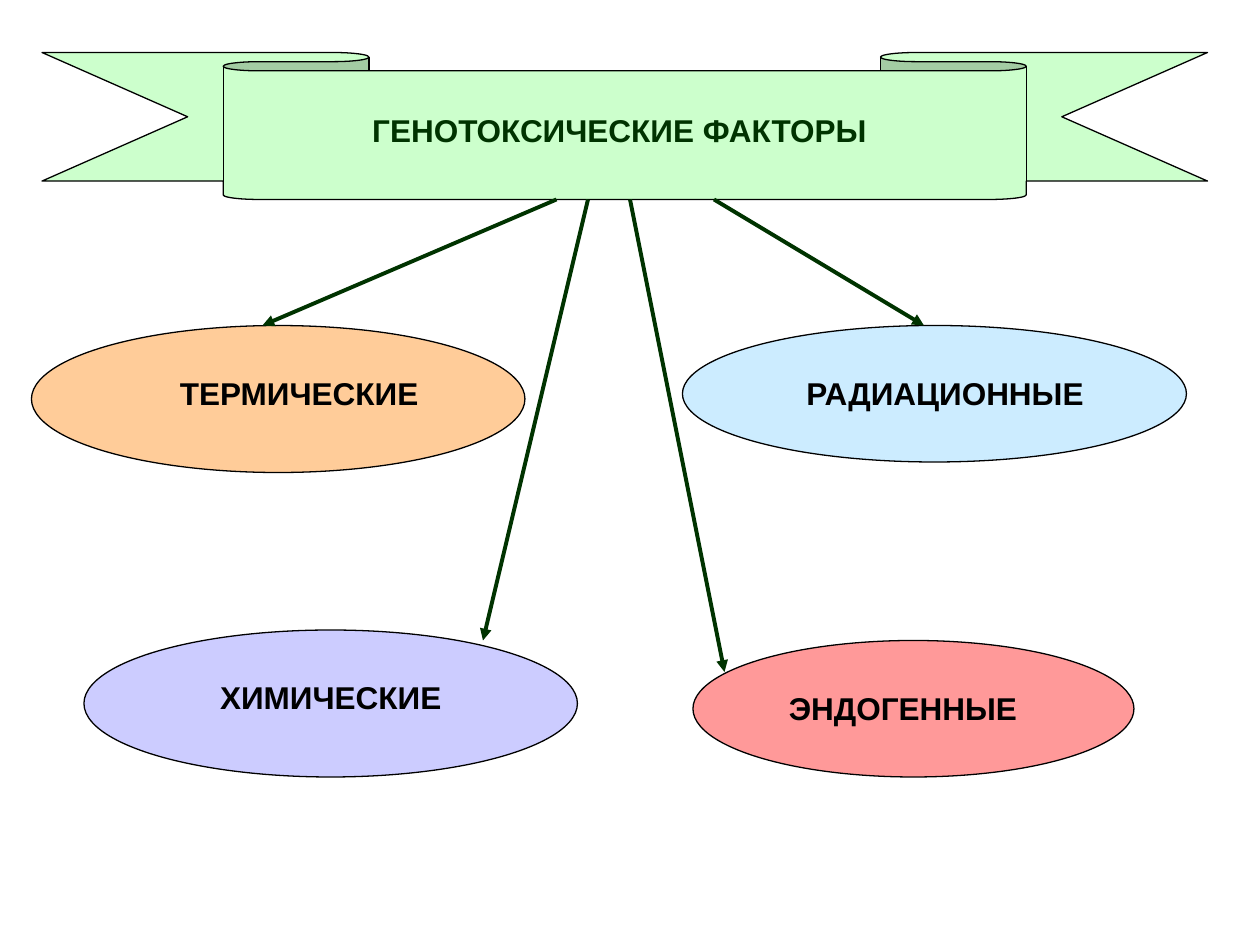
"""Builds a slide with a ribbon heading and four kinds of genotoxic factors."""
from lxml import etree
from pptx import Presentation
from pptx.dml.color import RGBColor
from pptx.enum.shapes import MSO_CONNECTOR, MSO_SHAPE
from pptx.enum.text import MSO_ANCHOR, MSO_AUTO_SIZE, PP_ALIGN
from pptx.oxml.ns import qn
from pptx.util import Inches, Pt

RIBBON, ELLIPSE = MSO_SHAPE.DOWN_RIBBON, MSO_SHAPE.OVAL
STRAIGHT = MSO_CONNECTOR.STRAIGHT
TOP, CENTER, NO_FIT = MSO_ANCHOR.TOP, PP_ALIGN.CENTER, MSO_AUTO_SIZE.NONE

COLORS = {
    "ribbon": "CCFFCC",
    "dark": "003300",
    "black": "000000",
    "thermal": "FFCC99",
    "radiation": "CCECFF",
    "chemical": "CCCCFF",
    "endogenous": "FF9999",
}
WIDTH, HEIGHT = Inches(10), Inches(7.5)
COLUMNS, ROWS = 120, 90
LABEL_ROWS = 6

HEADING = "ГЕНОТОКСИЧЕСКИЕ ФАКТОРЫ"
HEADING_CELL = (25, 10, 68, LABEL_ROWS)
RIBBON_CELL = (4, 5, 111, 14)
RIBBON_FOLDS = (0.125, 0.689)
ARROW_START_ROW = RIBBON_CELL[1] + RIBBON_CELL[3]

FACTORS = [
    {"name": "ТЕРМИЧЕСКИЕ", "color": "thermal", "oval": (3, 31, 47, 14),
     "label": (11, 35, 35), "arrow": (53, 25, 31)},
    {"name": "РАДИАЦИОННЫЕ", "color": "radiation", "oval": (65, 31, 48, 13),
     "label": (70, 35, 40), "arrow": (68, 88, 31)},
    {"name": "ХИМИЧЕСКИЕ", "color": "chemical", "oval": (8, 60, 47, 14),
     "label": (15, 64, 33), "arrow": (56, 46, 61)},
    {"name": "ЭНДОГЕННЫЕ", "color": "endogenous", "oval": (66, 61, 42, 13),
     "label": (70, 65, 32), "arrow": (60, 69, 64)},
]


def rgb(name):
    return RGBColor.from_string(COLORS[name])


def place(*cells):
    units = (WIDTH // COLUMNS, HEIGHT // ROWS)
    return [cell * units[i % 2] for i, cell in enumerate(cells)]


def write(holder, text, color="black", size=18, font="Arial", bold=True):
    frame = holder.text_frame
    frame.word_wrap = True
    frame.auto_size = NO_FIT
    frame.vertical_anchor = TOP
    paragraph = frame.paragraphs[0]
    paragraph.alignment = CENTER
    run = paragraph.add_run()
    run.text = text
    run.font.size, run.font.name, run.font.bold = Pt(size), font, bold
    run.font.color.rgb = rgb(color)


def add_outlined(slide, kind, cell, color):
    shape = slide.shapes.add_shape(kind, *place(*cell))
    shape.shadow.inherit = False
    shape.fill.solid()
    shape.fill.fore_color.rgb = rgb(color)
    shape.line.color.rgb = rgb("black")
    shape.line.width = Pt(0.75)
    return shape


def add_arrow(slide, start_column, end_column, end_row):
    ends = place(start_column, ARROW_START_ROW, end_column, end_row)
    arrow = slide.shapes.add_connector(STRAIGHT, *ends)
    arrow.line.color.rgb = rgb("dark")
    arrow.line.width = Pt(2.25)
    properties = arrow._element.spPr
    etree.SubElement(properties.find(qn("a:ln")), qn("a:tailEnd"), type="triangle")
    etree.SubElement(properties, qn("a:effectLst"))


def main():
    deck = Presentation()
    deck.slide_width, deck.slide_height = WIDTH, HEIGHT
    slide = deck.slides.add_slide(deck.slide_layouts[5])

    ribbon = add_outlined(slide, RIBBON, RIBBON_CELL, "ribbon")
    for i, fold in enumerate(RIBBON_FOLDS):
        ribbon.adjustments[i] = fold

    heading = slide.shapes.title
    heading.left, heading.top, heading.width, heading.height = place(*HEADING_CELL)
    write(heading, HEADING, color="dark")
    ribbon._element.addnext(heading._element)

    for factor in FACTORS:
        add_outlined(slide, ELLIPSE, factor["oval"], factor["color"])
    for factor in FACTORS:
        label = slide.shapes.add_textbox(*place(*factor["label"], LABEL_ROWS))
        write(label, factor["name"])
    for factor in FACTORS:
        add_arrow(slide, *factor["arrow"])

    deck.save("out.pptx")


if __name__ == "__main__":
    main()
